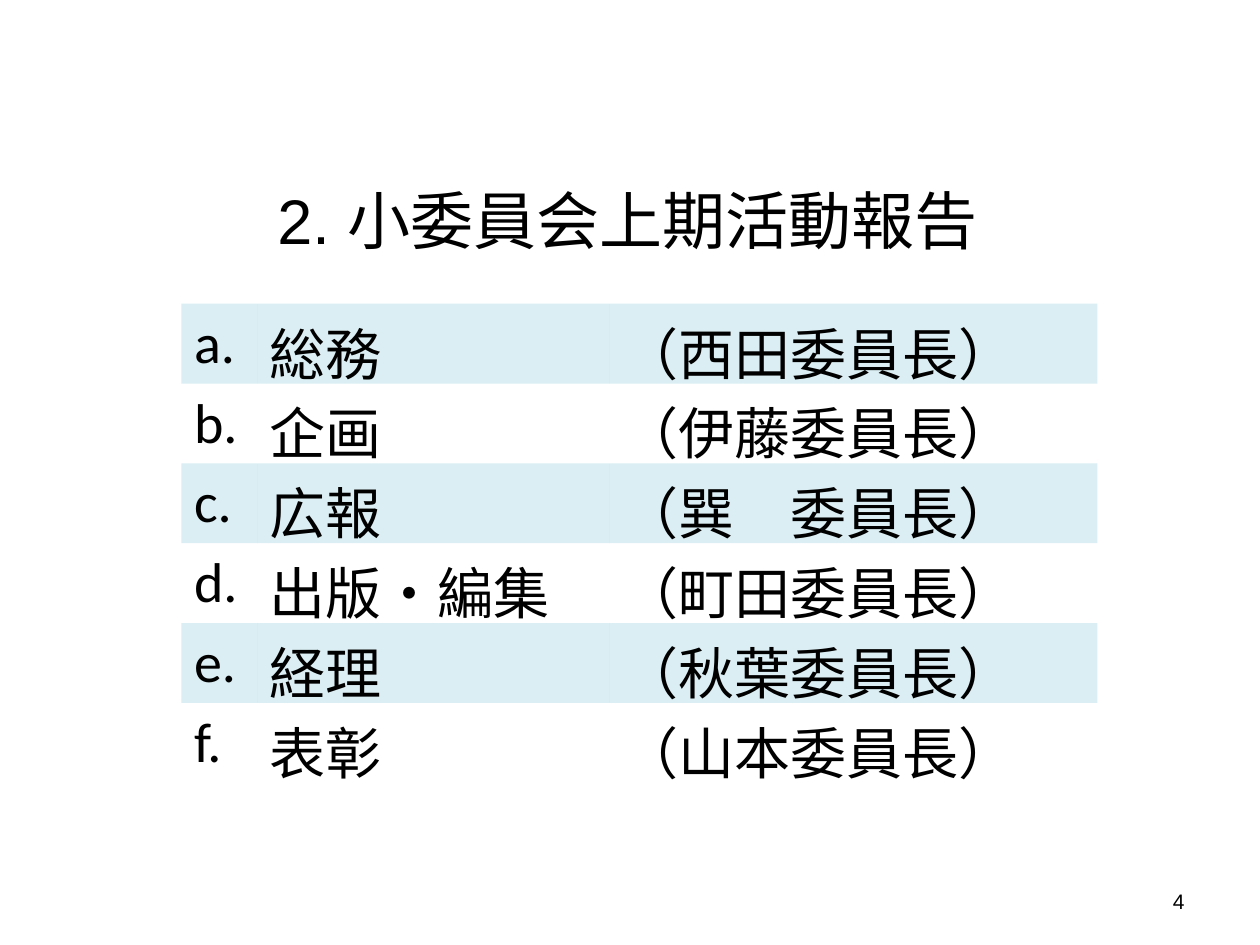
from lxml import etree
from pptx import Presentation
from pptx.dml.color import RGBColor
from pptx.enum import text
from pptx.oxml import ns
from pptx.util import Inches, Pt

BLACK = RGBColor(0x00, 0x00, 0x00)
TEAL = RGBColor(0x4B, 0xAC, 0xC6)
NO_GRID = "{2D5ABB26-0587-4C30-8999-92F81FD0307C}"
TEAMS = [
    ("総務", "（西田委員長）"),
    ("企画", "（伊藤委員長）"),
    ("広報", "（巽　委員長）"),
    ("出版・編集", "（町田委員長）"),
    ("経理", "（秋葉委員長）"),
    ("表彰", "（山本委員長）"),
]


class Page:
    def __init__(self, deck):
        self.slide = deck.slides.add_slide(deck.slide_layouts[5])

    def label(self, frame, words, size, face, align):
        frame.word_wrap = True
        line = frame.paragraphs[0]
        line.text = words
        line.alignment = align
        line.font.size = Pt(size)
        line.font.name = face
        line.font.color.rgb = BLACK

    def title(self, words, box):
        shape = self.slide.shapes.title
        shape.left, shape.top, shape.width, shape.height = map(Inches, box)
        shape.text_frame.vertical_anchor = text.MSO_ANCHOR.TOP
        self.label(shape.text_frame, words, 36, "Arial",
                   text.PP_ALIGN.CENTER)

    def number(self, words, box):
        shape = self.slide.shapes.add_textbox(*map(Inches, box))
        shape.text_frame.vertical_anchor = text.MSO_ANCHOR.MIDDLE
        self.label(shape.text_frame, words, 12, "Arial",
                   text.PP_ALIGN.RIGHT)

    def tint(self, cell):
        """Fill the cell with teal at 20 % opacity."""
        cell.fill.solid()
        cell.fill.fore_color.rgb = TEAL
        color = cell._tc.tcPr.find(".//" + ns.qn("a:srgbClr"))
        etree.SubElement(color, ns.qn("a:alpha"), val="20000")

    def table(self, rows, box, widths):
        frame = self.slide.shapes.add_table(
            len(rows), len(widths), *map(Inches, box))
        table = frame.table
        table.first_row = table.horz_banding = False
        table._tbl.tblPr.find(ns.qn("a:tableStyleId")).text = NO_GRID
        for column, width in zip(table.columns, widths):
            column.width = Inches(width)
        anchors = [text.MSO_ANCHOR.TOP] * 2 + [text.MSO_ANCHOR.MIDDLE]
        for r, row in enumerate(rows):
            for c, words in enumerate(row):
                cell = table.cell(r, c)
                self.label(cell.text_frame, words, 32, "Calibri",
                           text.PP_ALIGN.LEFT)
                cell.vertical_anchor = anchors[c]
                if r % 2 == 0:
                    self.tint(cell)
                else:
                    cell.fill.background()


def main():
    deck = Presentation()
    deck.slide_width, deck.slide_height = Inches(10), Inches(7.5)
    page = Page(deck)
    page.title("2. 小委員会上期活動報告", (0.47, 1.39, 9.02, 0.71))
    page.number("4", (7.17, 6.95, 2.33, 0.4))
    rows = [(f"{mark}.", *team) for mark, team in zip("abcdef", TEAMS)]
    page.table(rows, (1.44, 2.41, 7.27, 3.8), (0.6, 2.8, 3.87))
    deck.save("out.pptx")


if __name__ == "__main__":
    main()
